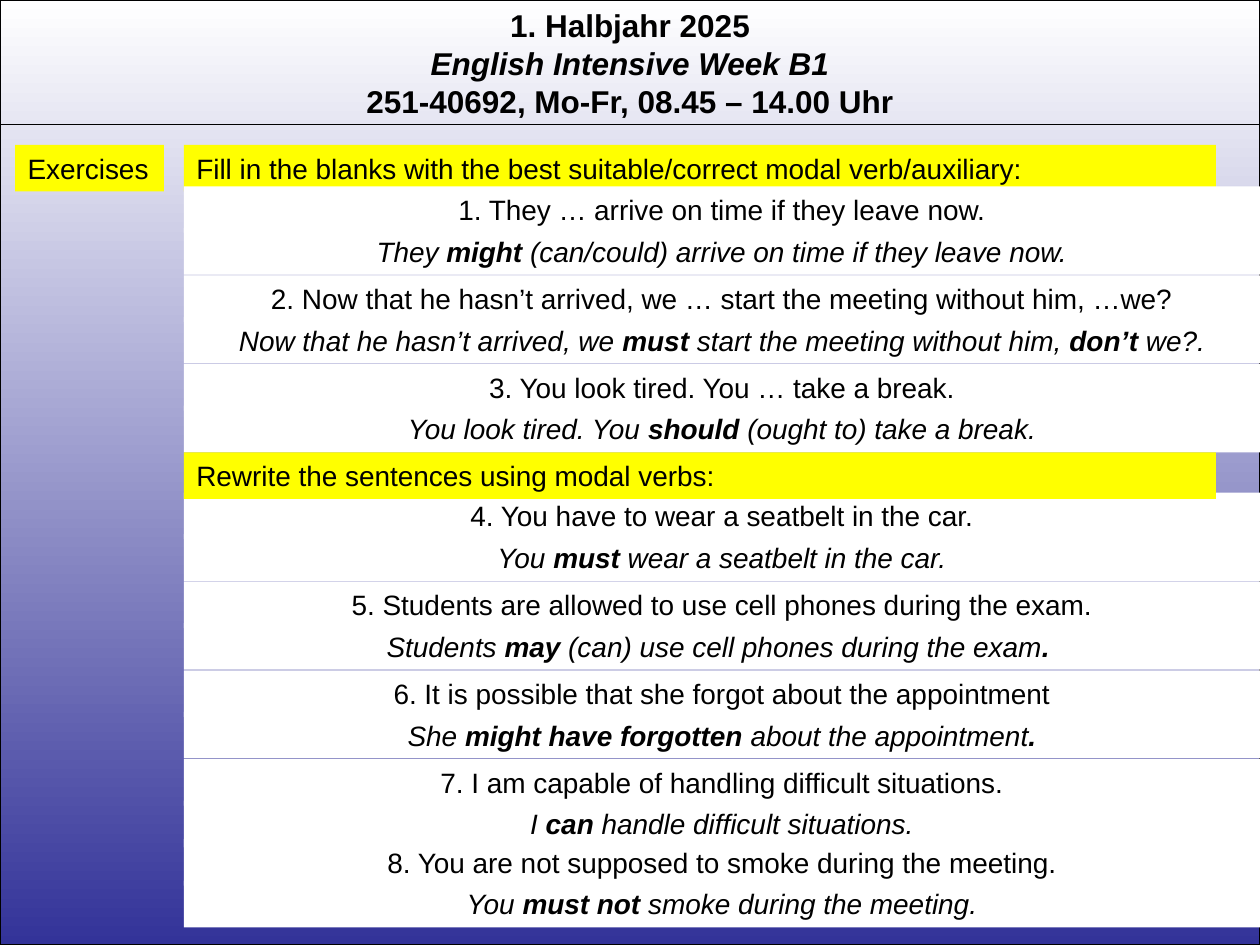
"""Build the modal verb exercise slide of an English intensive week."""
from dataclasses import dataclass

from lxml.etree import SubElement
from pptx import Presentation
from pptx.dml.color import RGBColor
from pptx.enum.shapes import MSO_CONNECTOR, MSO_SHAPE
from pptx.enum.text import MSO_ANCHOR, PP_ALIGN
from pptx.oxml.ns import qn
from pptx.util import Inches, Pt


@dataclass(frozen=True)
class Theme:
    font: str = "Arial"
    title: int = 18
    body: int = 16
    hairline: float = 0.75
    ink: RGBColor = RGBColor(0, 0, 0)
    paper: RGBColor = RGBColor(255, 255, 255)
    deep: RGBColor = RGBColor(0x33, 0x33, 0x99)
    marker: RGBColor = RGBColor(255, 255, 0)


T = Theme()
W, H = 10, 7.5
RULE_Y = 0.99
LABEL_X, TASK_X = 0.12, 1.46
LABEL_W, TASK_W = 1.18, 8.19
ROW_H, ANSWER_STEP, PAIR_STEP = 0.37, 0.33, 0.705

TITLE = [
    ("*1. Halbjahr 2025*", False),
    ("*English Intensive Week B1*", True),
    ("*251-40692, Mo-Fr, 08.45 – 14.00 Uhr*", False),
]
LABEL = "Exercises"
HEADINGS = [
    (1.15, "Fill in the blanks with the best suitable/correct modal verb/auxiliary:"),
    (3.59, "Rewrite the sentences using modal verbs:"),
]
GROUPS = [
    (1.48, [
        ("1. They … arrive on time if they leave now.",
         "They *might* (can/could) arrive on time if they leave now."),
        ("2. Now that he hasn’t arrived, we … start the meeting without him, …we?",
         "Now that he hasn’t arrived, we *must* start the meeting without him, *don’t *we?."),
        ("3. You look tired. You … take a break.",
         "You look tired. You *should* (ought to) take a break."),
    ]),
    (3.91, [
        ("4. You have to wear a seatbelt in the car.",
         "You *must* wear a seatbelt in the car."),
        ("5. Students are allowed to use cell phones during the exam.",
         "Students *may* (can) use cell phones during the exam*. *"),
        ("6. It is possible that she forgot about the appointment",
         "She *might have forgotten *about the appointment*.*"),
        ("7. I am capable of handling difficult situations.",
         "I *can* handle difficult situations."),
    ]),
    (6.66, [
        ("8. You are not supposed to smoke during the meeting.",
         "You *must not *smoke during the meeting."),
    ]),
]


def write(tf, lines, size=T.body, align=PP_ALIGN.CENTER):
    """Write (text, italic) lines; asterisks switch bold on and off."""
    tf.word_wrap = True
    tf.vertical_anchor = MSO_ANCHOR.TOP
    for i, (text, italic) in enumerate(lines):
        p = tf.add_paragraph() if i else tf.paragraphs[0]
        p.alignment = align
        for j, part in enumerate(text.split("*")):
            if part:
                r = p.add_run()
                r.text = part
                r.font.name, r.font.size = T.font, Pt(size)
                r.font.bold, r.font.italic = j % 2 == 1, italic
                r.font.color.rgb = T.ink


def place(sp, x, y, w, h):
    """Set position and size in inches."""
    sp.left, sp.top, sp.width, sp.height = map(Inches, (x, y, w, h))


def add_panel(s, x, y, w, text, fill=T.paper, italic=False, align=PP_ALIGN.CENTER):
    """Add a filled one-line text panel."""
    sp = s.shapes.add_shape(MSO_SHAPE.RECTANGLE, *map(Inches, (x, y, w, ROW_H)))
    sp.shadow.inherit = False
    sp.fill.solid()
    sp.fill.fore_color.rgb = fill
    sp.line.fill.background()
    write(sp.text_frame, [(text, italic)], align=align)


def add_frame(s):
    """Add the gradient backdrop, the title and the rule below it."""
    back = s.shapes.add_shape(MSO_SHAPE.RECTANGLE, 0, 0, Inches(W), Inches(H))
    back.shadow.inherit = False
    back.fill.gradient()
    back.fill.gradient_angle = 270
    for stop, color in zip(back.fill.gradient_stops, (T.paper, T.deep)):
        stop.color.rgb = color
    title = s.shapes.title
    title._element.addprevious(back._element)
    place(title, 0, 0, W, 1.01)
    write(title.text_frame, TITLE, size=T.title)
    y = Inches(RULE_Y)
    rule = s.shapes.add_connector(MSO_CONNECTOR.STRAIGHT, 0, y, Inches(W), y)
    SubElement(rule._element.spPr, qn("a:effectLst"))
    for sp in (back, rule):
        sp.line.color.rgb = T.ink
        sp.line.width = Pt(T.hairline)


def add_heading(s, y, text, x=TASK_X, w=TASK_W):
    """Add a highlighted left-aligned panel."""
    add_panel(s, x, y, w, text, fill=T.marker, align=PP_ALIGN.LEFT)


def main():
    prs = Presentation()
    prs.slide_width, prs.slide_height = Inches(W), Inches(H)
    s = prs.slides.add_slide(prs.slide_layouts[5])
    add_frame(s)
    first, second = HEADINGS
    add_heading(s, first[0], LABEL, x=LABEL_X, w=LABEL_W)
    add_heading(s, *first)
    for top, pairs in GROUPS:
        for i, (question, answer) in enumerate(pairs):
            y = top + i * PAIR_STEP
            add_panel(s, TASK_X, y, W - TASK_X, question)
            add_panel(s, TASK_X, y + ANSWER_STEP, W - TASK_X, answer, italic=True)
    add_heading(s, *second)
    prs.save("out.pptx")


if __name__ == "__main__":
    main()
